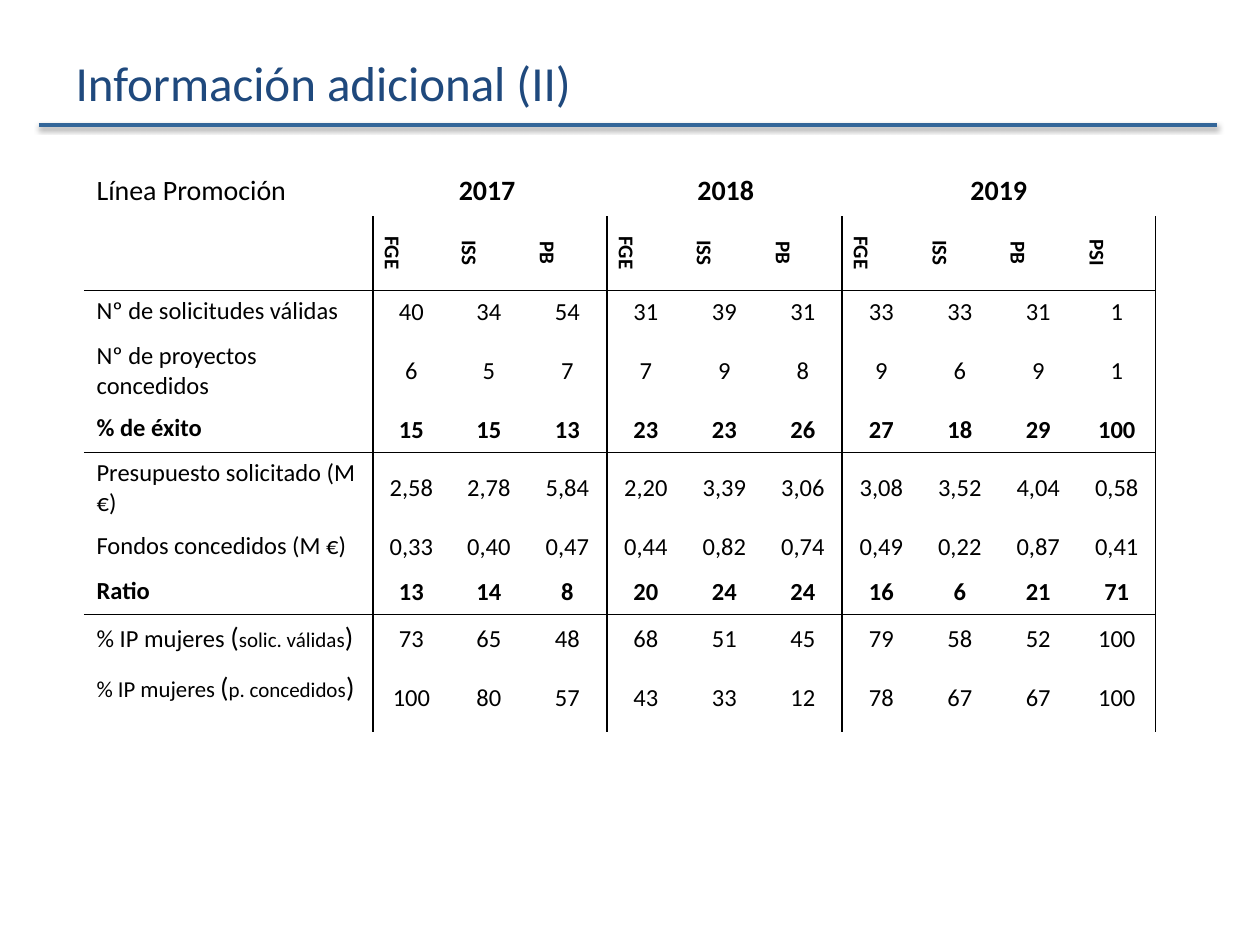
from itertools import cycle, islice

from lxml.etree import SubElement
from pptx import Presentation
from pptx.dml.color import RGBColor
from pptx.enum.shapes import MSO_CONNECTOR
from pptx.enum.text import MSO_ANCHOR, PP_ALIGN
from pptx.oxml import parse_xml
from pptx.oxml.ns import nsdecls, qn
from pptx.util import Pt

TITLE = "Información adicional (II)"
CORNER = "Línea Promoción"
# text, first column, last column, alignment
YEARS = [
    ("2017", 1, 2, PP_ALIGN.RIGHT),
    ("", 3, 4, PP_ALIGN.LEFT),
    ("2018", 5, 6, PP_ALIGN.LEFT),
    ("2019", 7, 10, PP_ALIGN.CENTER),
]
PROGRAMMES = ["FGE", "ISS", "PB"] * 3 + ["PSI"]
# label spans (text, size), values
ROWS = [
    ([("Nº de solicitudes válidas", 14)], "40 34 54 31 39 31 33 33 31 1"),
    ([("Nº de proyectos concedidos", 14)], "6 5 7 7 9 8 9 6 9 1"),
    ([("% de éxito", 14)], "15 15 13 23 23 26 27 18 29 100"),
    ([("Presupuesto solicitado (M €)", 14)],
     "2,58 2,78 5,84 2,20 3,39 3,06 3,08 3,52 4,04 0,58"),
    ([("Fondos concedidos (M €)", 14)],
     "0,33 0,40 0,47 0,44 0,82 0,74 0,49 0,22 0,87 0,41"),
    ([("Ratio", 14)], "13 14 8 20 24 24 16 6 21 71"),
    ([("% IP mujeres ", 14), ("(", 16), ("solic. válidas", 12), (")", 16)],
     "73 65 48 68 51 45 79 58 52 100"),
    ([("% IP mujeres ", 13), ("(", 16), ("p. concedidos", 12), (")", 16)],
     "100 80 57 43 33 12 78 67 67 100"),
]
BOLD_ROWS = {4, 7}
CENTRED_LABEL_ROW = 3
RULES_BELOW = {1, 4, 7}
RULES_LEFT = {1, 4, 7, 11}
LAST_YEAR_COLUMN = 7

COLUMN_WIDTHS = [289, 77, *islice(cycle((78, 79)), 9)]
ROW_HEIGHTS = [50, 74, 45, 72, 45, 72, 45, 45, 50, 68]

THEME = {
    "font": "Calibri", "title": "1F497D", "text": "000000", "line": "336699",
    "cell": "FFFFFF", "title_size": 28, "head_size": 16, "code_size": 12,
    "body_size": 14, "line_width": 2, "column_rule": 1, "row_rule": 0.25,
}


def px(value):
    return value * 914400 // 126


def add_span(para, text, size, bold=False, color=THEME["text"]):
    span = para.add_run()
    span.text = text
    span.font.name = THEME["font"]
    span.font.size = Pt(size)
    span.font.bold = bold
    span.font.color.rgb = RGBColor.from_string(color)


def write_cell(cell, spans, bold=False, align=PP_ALIGN.LEFT,
               anchor=MSO_ANCHOR.MIDDLE):
    cell.vertical_anchor = anchor
    para = cell.text_frame.paragraphs[0]
    para.alignment = align
    for text, size in spans:
        add_span(para, text, size, bold)


def set_border(cell, side, width):
    """Rule one side of a cell, or clear it when width is None."""
    border = SubElement(cell._tc.get_or_add_tcPr(), qn(f"a:ln{side}"))
    if width is None:
        SubElement(border, qn("a:noFill"))
    else:
        border.set("w", str(Pt(width)))
        fill = SubElement(border, qn("a:solidFill"))
        SubElement(fill, qn("a:srgbClr"), val=THEME["text"])


def style_cell(cell, row, column):
    vertical, horizontal = THEME["column_rule"], THEME["row_rule"]
    body = row > 0
    set_border(cell, "L", vertical if body and column in RULES_LEFT else None)
    set_border(cell, "R", vertical if body and column + 1 in RULES_LEFT else None)
    set_border(cell, "T", horizontal if row - 1 in RULES_BELOW else None)
    set_border(cell, "B", horizontal if row in RULES_BELOW else None)
    cell.fill.solid()
    cell.fill.fore_color.rgb = RGBColor.from_string(THEME["cell"])
    if row > 1 and column >= LAST_YEAR_COLUMN:
        cell.margin_left = cell.margin_right = px(5)
        cell.margin_top = cell.margin_bottom = 0


def add_title(page):
    box = page.shapes.title
    box.left, box.top, box.width, box.height = map(px, (63, 38, 1134, 87))
    box.text_frame.vertical_anchor = MSO_ANCHOR.MIDDLE
    para = box.text_frame.paragraphs[0]
    para.alignment = PP_ALIGN.LEFT
    add_span(para, TITLE, THEME["title_size"], color=THEME["title"])


def add_title_rule(page):
    rule = page.shapes.add_connector(
        MSO_CONNECTOR.STRAIGHT, px(39), px(125), px(1217), px(125))
    rule.line.color.rgb = RGBColor.from_string(THEME["line"])
    rule.line.width = Pt(THEME["line_width"])
    rule._element.spPr.append(parse_xml(
        f'<a:effectLst {nsdecls("a")}><a:outerShdw blurRad="{Pt(3.1)}" '
        f'dist="{Pt(1.6)}" dir="5400000" rotWithShape="0">'
        '<a:srgbClr val="000000"><a:alpha val="38000"/></a:srgbClr>'
        '</a:outerShdw></a:effectLst>'))


def add_results(page):
    frame = page.shapes.add_table(
        len(ROW_HEIGHTS), len(COLUMN_WIDTHS), px(84), px(165),
        px(sum(COLUMN_WIDTHS)), px(sum(ROW_HEIGHTS)))
    table = frame.table
    table.first_row = table.horz_banding = False
    for column, width in zip(table.columns, COLUMN_WIDTHS):
        column.width = px(width)
    for row, height in zip(table.rows, ROW_HEIGHTS):
        row.height = px(height)
    for row in range(len(ROW_HEIGHTS)):
        for column in range(len(COLUMN_WIDTHS)):
            style_cell(table.cell(row, column), row, column)

    write_cell(table.cell(0, 0), [(CORNER, THEME["head_size"])])
    for year, first, last, align in YEARS:
        cell = table.cell(0, first)
        cell.merge(table.cell(0, last))
        if year:
            write_cell(cell, [(year, THEME["head_size"])], bold=True, align=align)
    for column, code in enumerate(PROGRAMMES, 1):
        cell = table.cell(1, column)
        write_cell(cell, [(code, THEME["code_size"])], bold=True,
                   align=PP_ALIGN.CENTER)
        cell._tc.get_or_add_tcPr().set("vert", "vert")
    for row, (label, values) in enumerate(ROWS, 2):
        bold = row in BOLD_ROWS
        anchor = MSO_ANCHOR.MIDDLE if row == CENTRED_LABEL_ROW else MSO_ANCHOR.TOP
        write_cell(table.cell(row, 0), label, bold=bold, anchor=anchor)
        for column, value in enumerate(values.split(), 1):
            write_cell(table.cell(row, column), [(value, THEME["body_size"])],
                       bold=bold, align=PP_ALIGN.CENTER)


def main():
    deck = Presentation()
    deck.slide_width, deck.slide_height = px(1260), px(945)
    page = deck.slides.add_slide(deck.slide_layouts[5])
    add_title_rule(page)
    add_title(page)
    add_results(page)
    deck.save("out.pptx")


if __name__ == "__main__":
    main()
